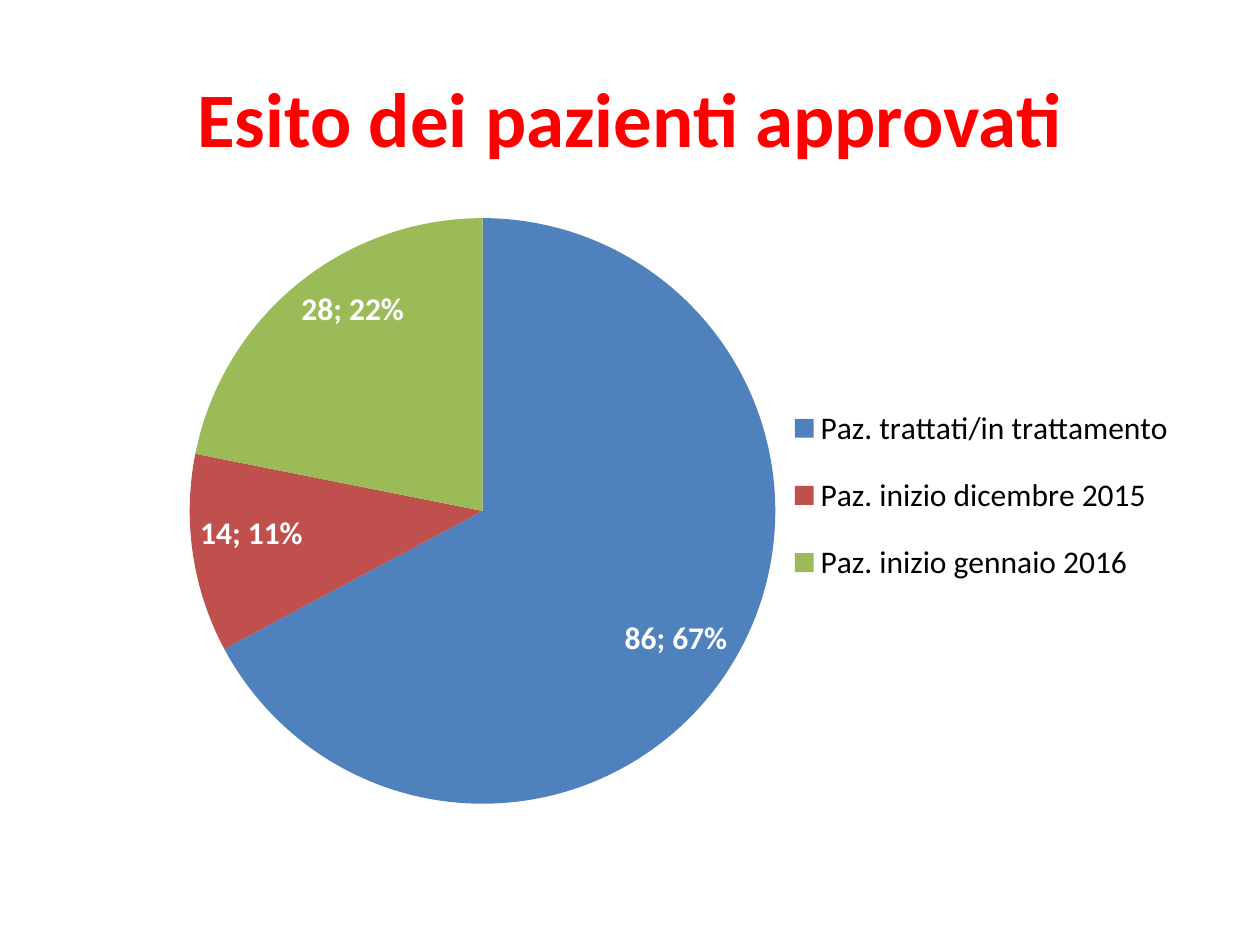
from pptx import Presentation
from pptx.chart.data import CategoryChartData as Data
from pptx.dml.color import RGBColor as RGB
from pptx.enum.chart import XL_CHART_TYPE as Kind
from pptx.enum.chart import XL_LABEL_POSITION as Spot
from pptx.enum.chart import XL_LEGEND_POSITION as Side
from pptx.enum.text import MSO_ANCHOR as Anchor
from pptx.enum.text import PP_ALIGN as Align
from pptx.oxml import parse_xml
from pptx.oxml.ns import nsdecls
from pptx.util import Pt

HUES = {
    "title": "FF0000",
    "text": "000000",
    "label": "FFFFFF",
    "treated": "4F81BD",
    "december": "C0504D",
    "january": "9BBB59",
}
SLICES = [
    ("Paz. trattati/in trattamento", 86, "treated"),
    ("Paz. inizio dicembre 2015", 14, "december"),
    ("Paz. inizio gennaio 2016", 28, "january"),
]


def layout(box, inner=False):
    """Manual chart layout; box is x, y, w, h as shares of the chart."""
    target = '<c:layoutTarget val="inner"/>' if inner else ""
    modes = '<c:xMode val="edge"/><c:yMode val="edge"/>'
    sizes = "".join(f'<c:{key} val="{val}"/>' for key, val in zip("xywh", box))
    return parse_xml(
        f'<c:layout {nsdecls("c")}><c:manualLayout>{target}{modes}{sizes}'
        "</c:manualLayout></c:layout>"
    )


def place(node, box, inner=False):
    """Give a plot area or legend node its manual layout."""
    for old in node.findall("{*}layout"):
        node.remove(old)
    mark = node.find("{*}legendPos")
    node.insert(0 if mark is None else node.index(mark) + 1, layout(box, inner))


class Deck:
    def __init__(self, face="Calibri"):
        self.face = face
        self.show = Presentation()
        self.show.slide_width, self.show.slide_height = Pt(720), Pt(540)
        self.slide = self.show.slides.add_slide(self.show.slide_layouts[5])

    def style(self, font, size, hue, bold=False):
        font.name, font.size, font.bold = self.face, Pt(size), bold
        font.color.rgb = RGB.from_string(HUES[hue])

    def title(self, text, box):
        shape = self.slide.shapes.title
        shape.left, shape.top, shape.width, shape.height = map(Pt, box)
        frame = shape.text_frame
        frame.word_wrap = True
        frame.vertical_anchor = Anchor.MIDDLE
        para = frame.paragraphs[0]
        para.alignment = Align.CENTER
        run = para.add_run()
        run.text = text
        self.style(run.font, 44, "title", True)

    def pie(self, slices, box):
        data = Data()
        data.categories = [name for name, _, _ in slices]
        data.add_series("Series 1", [val for _, val, _ in slices])
        chart = self.slide.shapes.add_chart(Kind.PIE, *map(Pt, box), data).chart
        chart.has_title = False
        self.style(chart.font, 18, "text")
        plot = chart.plots[0]
        plot.vary_by_categories = True
        for num, (_, _, hue) in enumerate(slices):
            fill = plot.series[0].points[num].format.fill
            fill.solid()
            fill.fore_color.rgb = RGB.from_string(HUES[hue])
        self.labels(plot.series[0].data_labels)
        chart.has_legend = True
        legend = chart.legend
        legend.position = Side.RIGHT
        legend.include_in_layout = False
        self.style(legend.font, 18, "text")
        area = chart.element.find(".//{*}plotArea")
        place(area, (0.11, 0.03, 0.52, 0.94), inner=True)
        place(area.getparent().find("{*}legend"), (0.63, 0.29, 0.36, 0.37))

    def labels(self, tags):
        tags.show_value = tags.show_percentage = True
        tags.show_category_name = tags.show_legend_key = False
        tags.position = Spot.INSIDE_END
        self.style(tags.font, 18, "label", True)
        gap = parse_xml(f'<c:separator {nsdecls("c")}>; </c:separator>')
        node = tags._element
        last = node.find("{*}showBubbleSize")
        if last is None:
            last = node.find("{*}showPercent")
        last.addnext(gap)


def main():
    deck = Deck()
    deck.pie(SLICES, (36, 114, 648, 356))
    deck.title("Esito dei pazienti approvati", (36, 21.6, 648, 90))
    deck.show.save("out.pptx")


if __name__ == "__main__":
    main()
